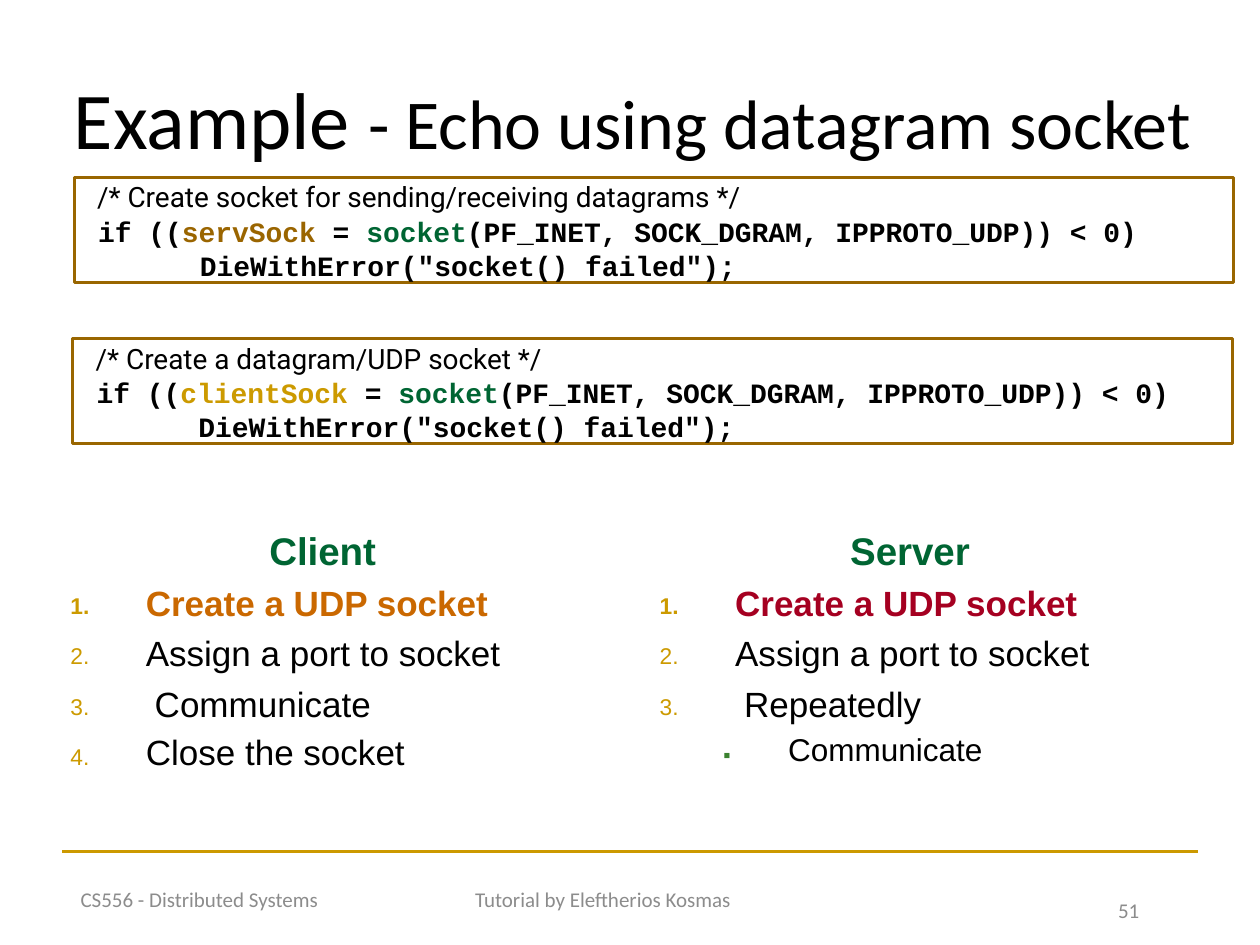
from lxml import etree
from pptx import Presentation
from pptx.dml.color import RGBColor
from pptx.enum import shapes, text
from pptx.oxml.ns import qn
from pptx.util import Cm, Pt

BLACK = RGBColor(0x00, 0x00, 0x00)
GREY = RGBColor(0x8C, 0x8C, 0x8C)
GOLD = RGBColor(0xCC, 0x9A, 0x00)
RULE = RGBColor(0xCC, 0x99, 0x00)
BROWN = RGBColor(0x9A, 0x65, 0x00)
BORDER = RGBColor(0x99, 0x66, 0x00)
GREEN = RGBColor(0x00, 0x65, 0x33)
LEAF = RGBColor(0x3B, 0x82, 0x2F)
ORANGE = RGBColor(0xCA, 0x68, 0x00)
RED = RGBColor(0xA5, 0x00, 0x21)

ROW = 1.02  # distance between list rows, cm


def prepare(tf, anchor=text.MSO_ANCHOR.TOP, top=0, wrap=True):
    tf.word_wrap = wrap
    tf.vertical_anchor = anchor
    tf.margin_left = tf.margin_right = tf.margin_bottom = 0
    tf.margin_top = Cm(top)
    return tf


def add_box(s, left, top, width, height, **options):
    sp = s.shapes.add_textbox(Cm(left), Cm(top), Cm(width), Cm(height))
    return prepare(sp.text_frame, **options)


def add_line(tf, runs, font, size, bold=False, indent=0, before=0, spacing=None,
             align=text.PP_ALIGN.LEFT):
    """Fill the first empty paragraph or a new one with (text, colour) runs."""
    p = tf.paragraphs[0] if not tf.text else tf.add_paragraph()
    p.alignment = align
    p.space_before = Pt(before)
    p.line_spacing = spacing
    p._p.get_or_add_pPr().set("marL", str(Cm(indent)))
    for words, color in runs:
        r = p.add_run()
        r.text = words
        r.font.name, r.font.size, r.font.bold = font, Pt(size), bold
        r.font.color.rgb = color
    return p


def add_title(s, left, top, width, height):
    tf = add_box(s, left, top, width, height, anchor=text.MSO_ANCHOR.MIDDLE, wrap=False)
    p = add_line(tf, [("Example ", BLACK), ("- Echo using datagram socket", BLACK)],
                 "Calibri", 46, align=text.PP_ALIGN.CENTER)
    p.runs[1].font.size = Pt(40)


def add_code(s, left, top, width, height, comment, variable, color):
    sp = s.shapes.add_shape(shapes.MSO_SHAPE.RECTANGLE,
                            Cm(left), Cm(top), Cm(width), Cm(height))
    sp.shadow.inherit = False
    sp.fill.background()
    sp.line.color.rgb = BORDER
    sp.line.width = Pt(1.75)
    tf = prepare(sp.text_frame, top=0.05)
    add_line(tf, [(comment, BLACK)], "Roboto", 16, indent=0.46, before=1.5)
    condition = [("if ((", BLACK), (variable, color), (" = ", BLACK), ("socket", GREEN),
                 ("(PF_INET, SOCK_DGRAM, IPPROTO_UDP)) < 0)", BLACK)]
    action = [('DieWithError("socket() failed");', BLACK)]
    for runs, indent in ((condition, 0.48), (action, 2.53)):
        add_line(tf, runs, "Courier New", 16, bold=True, indent=indent, spacing=Pt(19.5))


def add_steps(s, left, top, heading, heading_indent, accent, steps, last, numbers):
    """A heading, numbered steps and a last line given as (text, size, indent)."""
    # Numbers
    for i in range(numbers):
        tf = add_box(s, left, top + 1.3 + i * ROW, 0.46, 0.56)
        add_line(tf, [(f"{i + 1}.", GOLD)], "Arial", 13, bold=i == 0)
    # Heading and steps
    tf = add_box(s, left + 1.5, top, 7.4, 5)
    add_line(tf, [(heading, GREEN)], "Arial", 22, bold=True, indent=heading_indent)
    for i, step in enumerate(steps):
        add_line(tf, [(step, BLACK if i else accent)], "Arial", 20, bold=i == 0,
                 indent=0.2 if i == 2 else 0.02, spacing=Pt(28.8))
    words, size, indent = last
    add_line(tf, [(words, BLACK)], "Arial", size, indent=indent, before=3.5)


def add_footer(s, left, top, width):
    # Rule above the footer
    line = s.shapes.add_connector(shapes.MSO_CONNECTOR.STRAIGHT,
                                  Cm(left), Cm(top), Cm(left + width), Cm(top))
    line.line.color.rgb = RULE
    line.line.width = Pt(1.5)
    etree.SubElement(line._element.spPr, qn("a:effectLst"))
    # Course, author and page number
    parts = [
        ("CS556 - Distributed Systems", 0.23, 5.08, 0.86, text.PP_ALIGN.CENTER),
        ("Tutorial by Eleftherios Kosmas", 8.33, 5.54, 0.86, text.PP_ALIGN.LEFT),
        ("51", 21.16, 0.56, 1.3, text.PP_ALIGN.RIGHT),
    ]
    for words, x, w, h, align in parts:
        tf = add_box(s, left + x, top + 0.58, w, h,
                     anchor=text.MSO_ANCHOR.MIDDLE, wrap=False)
        add_line(tf, [(words, GREY)], "Calibri", 12, spacing=Pt(12), align=align)


def main():
    prs = Presentation()
    prs.slide_width, prs.slide_height = Cm(25.4), Cm(19.05)
    s = prs.slides.add_slide(prs.slide_layouts[6])

    add_title(s, 1.3, 1.37, 22.9, 1.98)
    add_code(s, 1.5, 3.58, 23.37, 2.11,
             "/* Create socket for sending/receiving datagrams */", "servSock", BROWN)
    add_code(s, 1.47, 6.83, 23.37, 2.11,
             "/* Create a datagram/UDP socket */", "clientSock", GOLD)

    first_steps = ["Create a UDP socket", "Assign a port to socket"]
    add_steps(s, 1.42, 10.62, "Client", 2.51, ORANGE, first_steps + ["Communicate"],
              ("Close the socket", 20, 0.02), 4)
    add_steps(s, 13.3, 10.62, "Server", 2.34, RED, first_steps + ["Repeatedly"],
              ("Communicate", 18, 1.09), 3)
    # Bullet of the server's sub-step
    tf = add_box(s, 14.58, 14.99, 0.25, 0.48)
    add_line(tf, [("▪", LEAF)], "Lato", 11)

    add_footer(s, 1.25, 17.16, 22.9)
    prs.save("out.pptx")


if __name__ == "__main__":
    main()
